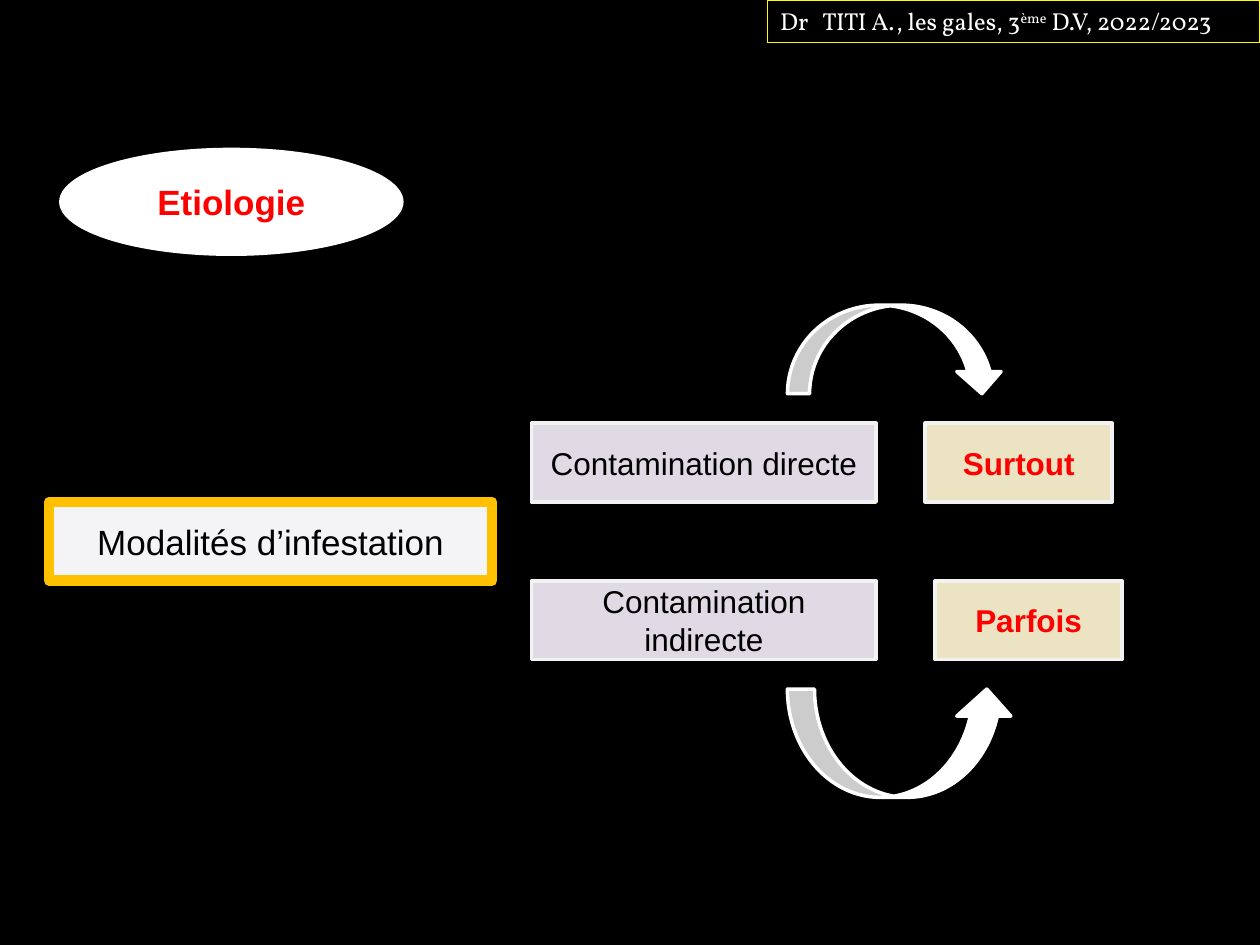
from dataclasses import dataclass

from pptx import Presentation
from pptx.dml.color import RGBColor
from pptx.enum.shapes import MSO_SHAPE
from pptx.enum.text import MSO_ANCHOR, MSO_AUTO_SIZE, PP_ALIGN
from pptx.util import Inches, Pt

RECT, OVAL = MSO_SHAPE.RECTANGLE, MSO_SHAPE.OVAL
DOWN, UP = MSO_SHAPE.CURVED_DOWN_ARROW, MSO_SHAPE.CURVED_UP_ARROW
MIDDLE, TOP = MSO_ANCHOR.MIDDLE, MSO_ANCHOR.TOP
CENTER, LEFT = PP_ALIGN.CENTER, PP_ALIGN.LEFT
GROW = MSO_AUTO_SIZE.SHAPE_TO_FIT_TEXT
WIDTH, HEIGHT = 10, 7.5
COLS = 128
UNIT = WIDTH / COLS


@dataclass(frozen=True)
class Theme:
    """Colours, fonts and type sizes of the slide."""
    black: str = "000000"
    white: str = "FFFFFF"
    red: str = "FF0000"
    gold: str = "FFC000"
    yellow: str = "FFFF00"
    pale: str = "F4F3F6"
    mauve: str = "DFDAE3"
    sand: str = "EBE3C2"
    edge: str = "F2F2F2"
    body: str = "Arial"
    serif: str = "Vollkorn"
    large: int = 20
    medium: int = 18
    small: int = 14


THEME = Theme()


def paint(fill, color):
    """Give a fill one solid colour, or none."""
    if color:
        fill.solid()
        fill.fore_color.rgb = RGBColor.from_string(color)
    else:
        fill.background()


def add_form(slide, kind, spot, fill=None, line=None, weight=2):
    """Add a preset shape at a grid spot: column, row, width, height."""
    shape = slide.shapes.add_shape(kind, *(Inches(n * UNIT) for n in spot))
    shape.shadow.inherit = False
    paint(shape.fill, fill)
    paint(shape.line.fill, line)
    if line:
        shape.line.width = Pt(weight)
    return shape


def put_text(shape, *parts, size=THEME.medium, color=THEME.black,
             font=THEME.body, bold=False, align=CENTER, anchor=MIDDLE):
    """Write (text, raise in percent) parts as one paragraph."""
    frame = shape.text_frame
    frame.word_wrap = True
    frame.vertical_anchor = anchor
    line = frame.paragraphs[0]
    line.alignment = align
    for text, lift in parts:
        run = line.add_run()
        run.text = text
        run.font.name, run.font.size, run.font.bold = font, Pt(size), bold
        run.font.color.rgb = RGBColor.from_string(color)
        if lift:
            run.font._element.set("baseline", str(lift * 1000))


def add_head(slide):
    """Add the course banner in the top right corner."""
    head = add_form(slide, RECT, (78, 0, 50, 4.3), line=THEME.yellow, weight=0.75)
    put_text(head, ("Dr   TITI A., les gales, 3", 0), ("ème", 30),
             (" D.V, 2022/2023", 0), size=THEME.small, color=THEME.white,
             font=THEME.serif, align=LEFT, anchor=TOP)
    head.text_frame.auto_size = GROW


def add_route(slide, row, route, rate, col):
    """Add a route of infestation with its frequency beside it."""
    box = add_form(slide, RECT, (54, row, 35, 8), THEME.mauve, THEME.edge)
    put_text(box, (route, 0))
    tag = add_form(slide, RECT, (col, row, 19, 8), THEME.sand, THEME.edge)
    put_text(tag, (rate, 0), color=THEME.red, bold=True)


def main():
    """Build and save the slide."""
    deck = Presentation()
    deck.slide_width, deck.slide_height = Inches(WIDTH), Inches(HEIGHT)
    slide = deck.slides.add_slide(deck.slide_layouts[6])
    paint(slide.background.fill, THEME.black)

    topic = add_form(slide, RECT, (5, 51, 45, 8), THEME.pale, THEME.gold, 6)
    put_text(topic, ("Modalités d’infestation", 0), size=THEME.large)
    cause = add_form(slide, OVAL, (6, 15, 35, 11), THEME.white)
    put_text(cause, ("Etiologie", 0), size=THEME.large, color=THEME.red, bold=True)

    add_route(slide, 43, "Contamination directe", "Surtout", 94)
    add_route(slide, 59, "Contamination indirecte", "Parfois", 95)
    for kind, spot in ((DOWN, (80, 31, 22, 9)), (UP, (80, 70, 23, 11))):
        add_form(slide, kind, spot, THEME.white, THEME.white)
    add_head(slide)
    deck.save("out.pptx")


if __name__ == "__main__":
    main()
